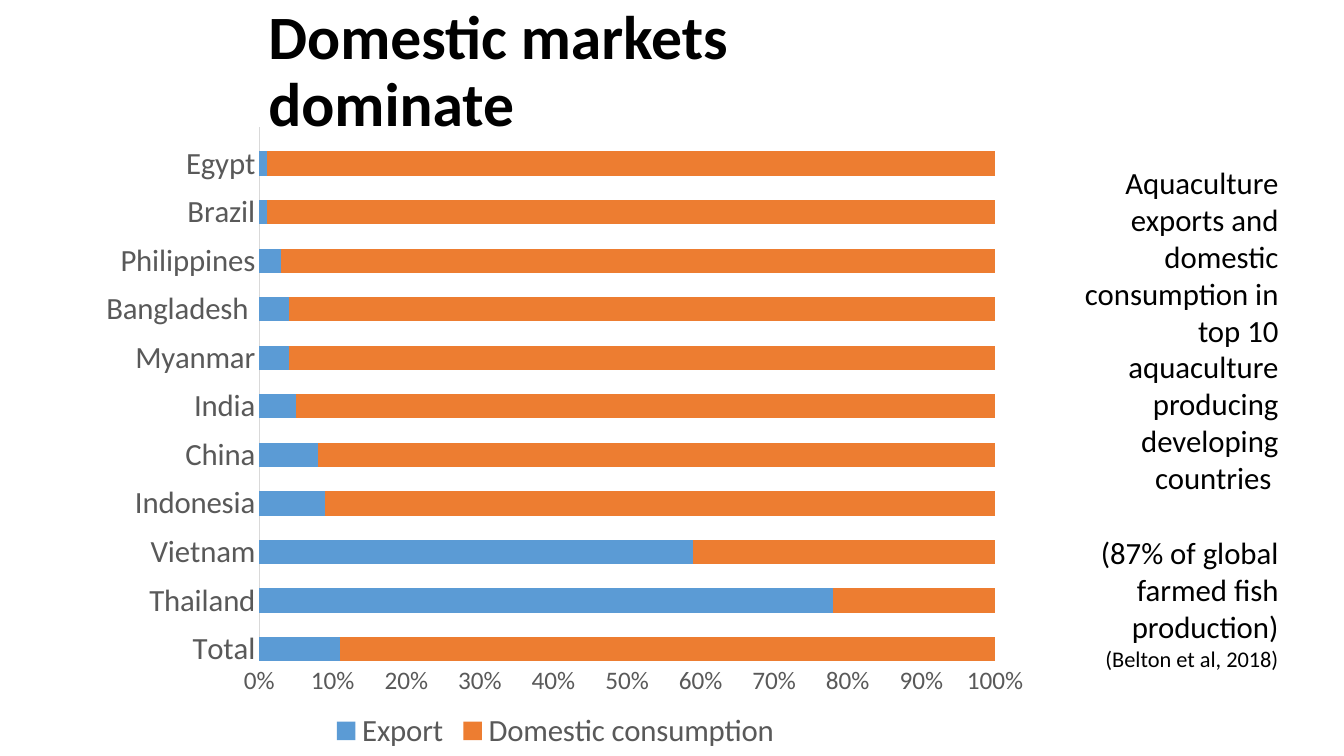
from lxml.etree import SubElement
from pptx import Presentation
from pptx.chart.data import CategoryChartData as ChartData
from pptx.dml.color import RGBColor as RGB
from pptx.enum.chart import XL_CHART_TYPE as CT, XL_LEGEND_POSITION as LP, XL_TICK_MARK as TM
from pptx.enum.text import MSO_ANCHOR as ANC, MSO_AUTO_SIZE as FIT, PP_ALIGN as AL
from pptx.oxml.ns import qn
from pptx.util import Pt

PX = 9525
FONT = "Calibri"
COLORS = {"text": "000000", "label": "595959", "axis": "D9D9D9",
          "Export": "5B9BD5", "Domestic consumption": "ED7D31"}
EXPORT_SHARES = {"Total": 11, "Thailand": 78, "Vietnam": 59, "Indonesia": 9,
                 "China": 8, "India": 5, "Myanmar": 4, "Bangladesh ": 4,
                 "Philippines": 3, "Brazil": 1, "Egypt": 1}
NOTES = [
    ("Aquaculture exports and domestic consumption in top 10 aquaculture "
     "producing developing countries ", 22, 0),
    ("(87% of global farmed fish production)", 22, 27),
    ("(Belton et al, 2018)", 16, 0),
]


def emu(box):
    return [v * PX for v in box]


def color(name):
    return RGB.from_string(COLORS[name])


def style(font, size, name, bold=False):
    font.name = FONT
    font.size = Pt(size)
    font.bold = bold
    font.color.rgb = color(name)


def add_title(s, box):
    sp = s.shapes.title
    sp.left, sp.top, sp.width, sp.height = emu(box)
    tf = sp.text_frame
    tf.word_wrap = True
    tf.auto_size = FIT.NONE
    tf.vertical_anchor = ANC.MIDDLE
    p = tf.paragraphs[0]
    p.alignment = AL.LEFT
    p.line_spacing = 0.9
    r = p.add_run()
    r.text = "Domestic markets dominate"
    style(r.font, 44, "text", True)


def add_notes(s, box):
    tf = s.shapes.add_textbox(*emu(box)).text_frame
    tf.word_wrap = True
    tf.auto_size = FIT.SHAPE_TO_FIT_TEXT
    for i, (text, size, before) in enumerate(NOTES):
        p = tf.add_paragraph() if i else tf.paragraphs[0]
        p.alignment = AL.RIGHT
        p.space_before = Pt(before)
        r = p.add_run()
        r.text = text
        style(r.font, size, "text")


def set_plot_layout(chart, x, y, w, h):
    area = chart.plots[0]._element.getparent()
    layout = area.find(qn("c:layout"))
    if layout is None:
        layout = SubElement(area, qn("c:layout"))
        area.insert(0, layout)
    manual = SubElement(layout, qn("c:manualLayout"))
    settings = {"layoutTarget": "inner", "xMode": "edge", "yMode": "edge",
                "x": x, "y": y, "w": w, "h": h}
    for tag, val in settings.items():
        SubElement(manual, qn(f"c:{tag}")).set("val", str(val))


def add_market_chart(s, box):
    data = ChartData(number_format="0")
    exports, domestic = [], []
    for country, share in EXPORT_SHARES.items():
        data.add_category(country)
        data.add_category("")
        exports += [share, None]
        domestic += [100 - share, None]
    data.add_series("Export", exports)
    data.add_series("Domestic consumption", domestic)
    chart = s.shapes.add_chart(CT.BAR_STACKED_100, *emu(box), data).chart
    chart.has_title = False
    style(chart.font, 10, "text")

    plot = chart.plots[0]
    plot.gap_width = 0
    plot.overlap = 100
    plot.vary_by_categories = False
    for series in plot.series:
        series.format.fill.solid()
        series.format.fill.fore_color.rgb = color(series.name)

    for axis, size in ((chart.category_axis, 22), (chart.value_axis, 18)):
        axis.has_major_gridlines = False
        axis.major_tick_mark = axis.minor_tick_mark = TM.NONE
        style(axis.tick_labels.font, size, "label")
    line = chart.category_axis.format.line
    line.color.rgb = color("axis")
    line.width = Pt(0.75)
    axis = chart.value_axis
    axis.format.line.fill.background()
    axis.tick_labels.number_format = "0%"
    axis.tick_labels.number_format_is_linked = False

    chart.has_legend = True
    chart.legend.position = LP.BOTTOM
    chart.legend.include_in_layout = False
    style(chart.legend.font, 22, "label")
    set_plot_layout(chart, 0.19, 0.07, 0.77, 0.79)


def main():
    prs = Presentation()
    prs.slide_width, prs.slide_height = emu((1280, 720))
    s = prs.slides.add_slide(prs.slide_layouts.get_by_name("Title Only"))
    add_title(s, (246, 0, 703, 139))
    add_notes(s, (1003, 151, 224, 494))
    add_market_chart(s, (74, 76, 910, 644))
    prs.save("out.pptx")


if __name__ == "__main__":
    main()
